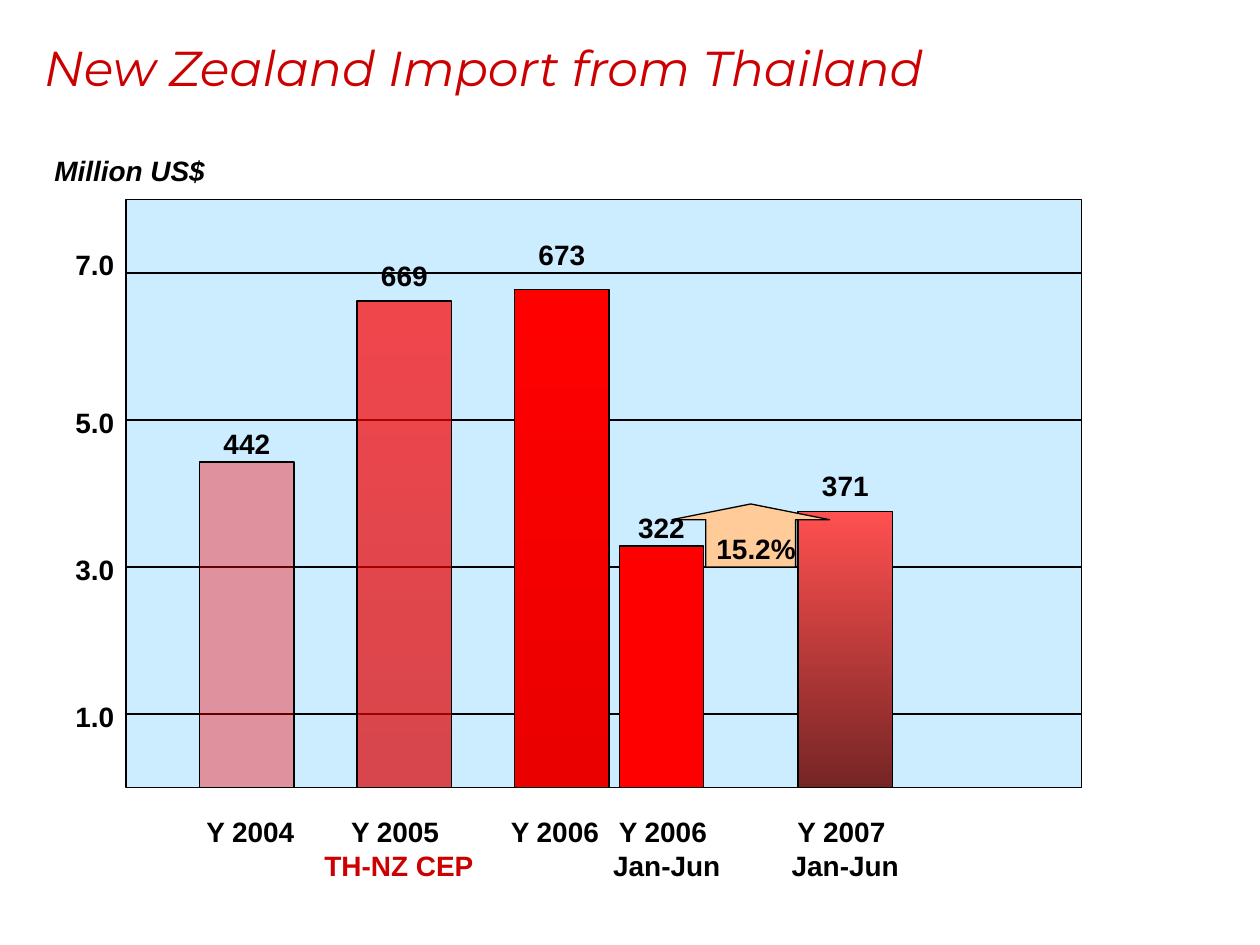
from dataclasses import dataclass

from lxml import etree
from pptx import Presentation
from pptx.dml.color import RGBColor
from pptx.enum import shapes, text
from pptx.oxml import ns
from pptx.util import Pt


@dataclass(frozen=True)
class Theme:
    """Colours, fonts and sizes of the slide."""
    ink: str = "000000"
    accent: str = "CC0000"
    plot: str = "CCECFF"
    arrow: str = "FFCC99"
    head: str = "Montserrat"
    body: str = "Arial"
    big: float = 28
    small: float = 16
    rule: float = 0.75


@dataclass(frozen=True)
class Bar:
    """One bar, placed relative to the plot box."""
    left: float
    width: float
    top: float
    value: str
    gap: float
    colors: tuple
    alpha: int
    label: tuple
    start: float
    span: float


THEME = Theme()
INK, RED = THEME.ink, THEME.accent
BARS = (
    Bar(42, 54, 150, "442", 24, ("FF0000",), 38,
        ((" Y 2004", INK),), 30, 78),
    Bar(132, 54, 58, "669", 28, ("FF0000", "DB0000"), 70,
        (("Y 2005 ", INK), ("TH-NZ CEP", RED)), 102, 108),
    Bar(222, 54, 51.5, "673", 33.5, ("FF0000", "EB0000"), 100,
        ((" Y 2006", INK),), 204, 78),
    Bar(282, 48, 198, "322", 24, ("FF0000",), 100,
        (("Y 2006 ", INK), ("Jan-Jun", INK)), 270, 78),
    Bar(384, 54, 178.5, "371", 28.5, ("FF5050", "762525"), 100,
        (("Y 2007 ", INK), ("Jan-Jun", INK)), 372, 78),
)
TICKS = (("7.0", 18), ("5.0", 12), ("3.0", 12), ("1.0", 12))


def rgb(code):
    """Turn a hex code into a colour."""
    return RGBColor.from_string(code)


def style(run, name, size, color, bold=False, italic=False):
    """Set the font of one run."""
    font = run.font
    font.name, font.size = name, Pt(size)
    font.bold, font.italic = bold, italic
    font.color.rgb = rgb(color)


def write(parent, box, lines, center=True, italic=False):
    """Add a text box with one run for each line."""
    frame = parent.add_textbox(*map(Pt, box)).text_frame
    frame.word_wrap = True
    para = frame.paragraphs[0]
    para.alignment = text.PP_ALIGN.CENTER if center else text.PP_ALIGN.LEFT
    for i, (words, color) in enumerate(lines):
        if i:
            para.add_line_break()
        run = para.add_run()
        run.text = words
        style(run, THEME.body, THEME.small, color, True, italic)


def paint(shape, colors, alpha=100):
    """Fill a shape with one colour or a downward gradient, and outline it."""
    shape.shadow.inherit = False
    fill = shape.fill
    if len(colors) == 1:
        fill.solid()
        fill.fore_color.rgb = rgb(colors[0])
    else:
        fill.gradient()
        fill.gradient_angle = 270
        for stop, color in zip(fill.gradient_stops, colors):
            stop.color.rgb = rgb(color)
    if alpha < 100:
        for node in shape._element.spPr.iter(ns.qn("a:srgbClr")):
            etree.SubElement(node, ns.qn("a:alpha"), val=str(alpha * 1000))
    shape.line.color.rgb = rgb(INK)
    shape.line.width = Pt(THEME.rule)


def add_title(slide, box):
    """Place and fill the title placeholder."""
    title = slide.shapes.title
    title.left, title.top, title.width, title.height = map(Pt, box)
    frame = title.text_frame
    frame.vertical_anchor = text.MSO_ANCHOR.MIDDLE
    para = frame.paragraphs[0]
    para.alignment = text.PP_ALIGN.LEFT
    run = para.add_run()
    run.text = "New Zealand Import from Thailand"
    style(run, THEME.head, THEME.big, RED, italic=True)


def add_rule(slide, left, top, width):
    """Draw a horizontal line."""
    line = slide.shapes.add_connector(
        shapes.MSO_CONNECTOR.STRAIGHT, Pt(left), Pt(top), Pt(left + width), Pt(top))
    line.line.color.rgb = rgb(INK)
    line.line.width = Pt(THEME.rule)
    etree.SubElement(line._element.spPr, ns.qn("a:effectLst"))


def add_plot(slide, box):
    """Draw the plot area with its unit, grid lines and scale."""
    left, top, width, height = box
    area = slide.shapes.add_shape(shapes.MSO_SHAPE.RECTANGLE, *map(Pt, box))
    paint(area, (THEME.plot,))
    add_rule(slide, left, top, width)
    write(slide.shapes, (left - 48, top - 30, 112, 27),
          (("Million US$", INK),), False, True)
    step = height / len(TICKS)
    for i, (tick, rise) in enumerate(TICKS):
        level = top + step * (i + 0.5)
        add_rule(slide, left, level, width)
        write(slide.shapes, (left - 36, level - rise, 48, 27),
              ((tick, INK),), False)


def add_bar(slide, box, bar):
    """Draw a bar grouped with its value, and its label below the plot."""
    left, top, _, height = box
    write(slide.shapes, (left + bar.start, top + height + 12, bar.span,
                         7 + 20 * len(bar.label)), bar.label)
    group = slide.shapes.add_group_shape().shapes
    spot = (left + bar.left, top + bar.top, bar.width, height - bar.top)
    paint(group.add_shape(shapes.MSO_SHAPE.RECTANGLE, *map(Pt, spot)),
          bar.colors, bar.alpha)
    write(group, (spot[0], spot[1] - bar.gap, bar.width, 27),
          ((bar.value, INK),))


def add_growth(slide, box):
    """Draw the growth arrow with its rate."""
    left, top, _, _ = box
    group = slide.shapes.add_group_shape().shapes
    arrow = group.add_shape(shapes.MSO_SHAPE.UP_ARROW, *map(Pt, box))
    arrow.adjustments[0] = 0.57
    arrow.adjustments[1] = 0.25
    paint(arrow, (THEME.arrow,))
    write(group, (left + 18, top + 12, 60, 27), (("15.2%", INK),))


def main():
    """Build and save the slide."""
    deck = Presentation()
    deck.slide_width, deck.slide_height = Pt(720), Pt(540)
    slide = deck.slides.add_slide(deck.slide_layouts[5])
    plot = (72, 114, 546, 336)
    add_title(slide, (18, 0, 648, 76))
    add_plot(slide, plot)
    for bar in BARS:
        add_bar(slide, plot, bar)
    add_growth(slide, (384, 288, 90, 36))
    deck.save("out.pptx")


if __name__ == "__main__":
    main()
